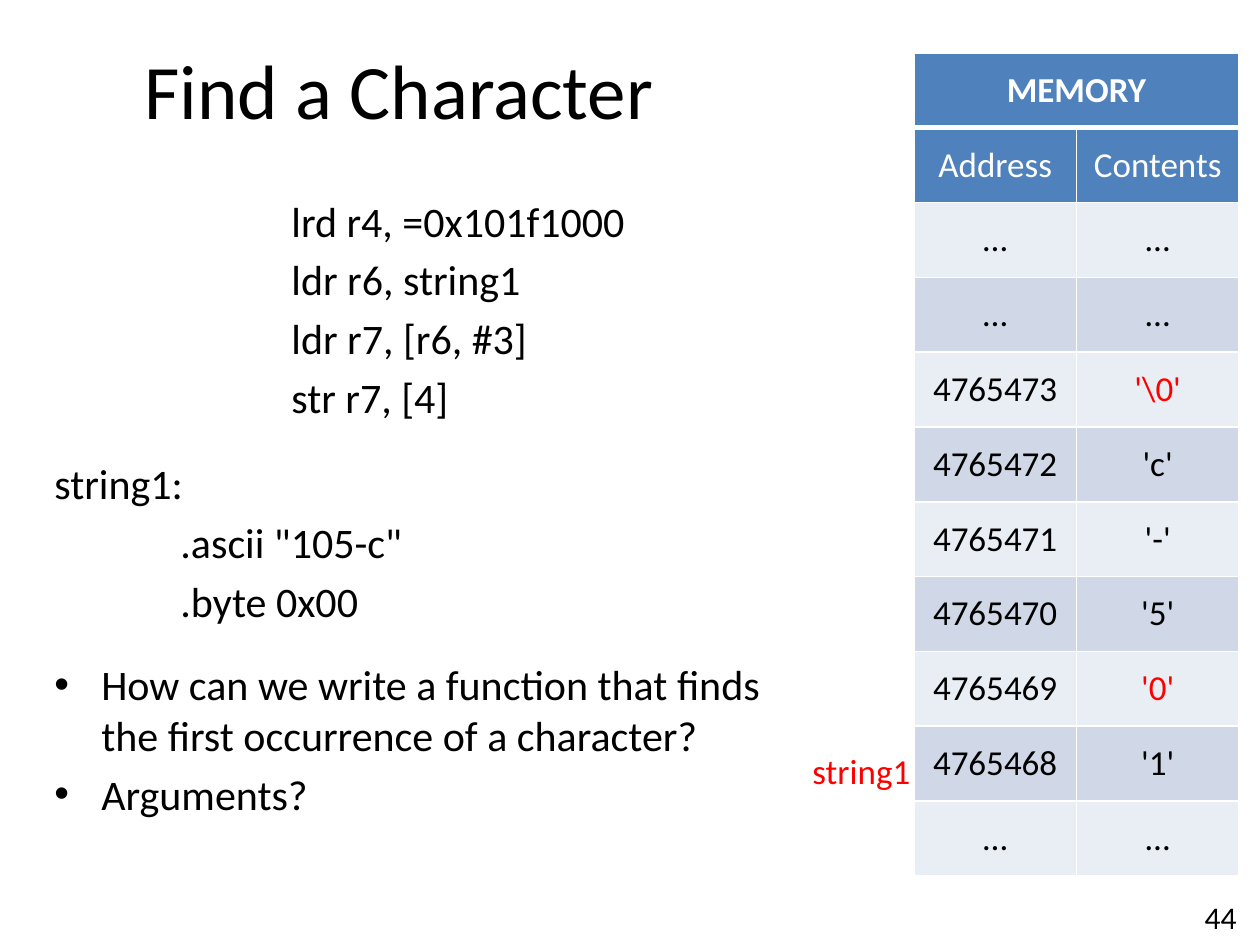
from lxml import etree
from pptx import Presentation
from pptx.dml.color import RGBColor
from pptx.enum.text import MSO_ANCHOR, PP_ALIGN
from pptx.oxml.ns import qn
from pptx.util import Pt

LEFT, MID, RIGHT = PP_ALIGN.LEFT, PP_ALIGN.CENTER, PP_ALIGN.RIGHT
TOP, CENTER = MSO_ANCHOR.TOP, MSO_ANCHOR.MIDDLE
SCALE = 914400 / 126
COLORS = {"black": "000000", "white": "FFFFFF", "red": "FF0000",
          "head": "4F81BD", "light": "E9EDF4", "dark": "D0D8E8"}


def px(n):
    return round(n * SCALE)


def write(para, text, size=24, color="black", bold=False, align=LEFT,
          before=0, indent=0, bullet=False):
    """Fill a paragraph; indent is in px, and a bullet hangs in it."""
    props = para._p.get_or_add_pPr()
    props.set("marL", str(px(indent)))
    props.set("indent", str(-px(indent) if bullet else 0))
    para.alignment = align
    para.space_before = Pt(before)
    if bullet:
        etree.SubElement(props, qn("a:buFont")).set("typeface", "Arial")
        etree.SubElement(props, qn("a:buChar")).set("char", "•")
    run = para.add_run()
    run.text = text
    run.font.name = "Calibri"
    run.font.size = Pt(size)
    run.font.bold = bold
    run.font.color.rgb = RGBColor.from_string(COLORS[color])


prs = Presentation()
prs.slide_width, prs.slide_height = px(1260), px(945)
slide = prs.slides.add_slide(prs.slide_layouts[6])

# Text boxes: place, anchor, wrap, then text and format of each paragraph
code = dict(indent=237, before=4.8)
data = dict(indent=126, before=4.8)
point = dict(indent=47, bullet=True)
boxes = [
    ((63, 10, 672, 158), CENTER, True,
     [("Find a Character", dict(size=44, align=MID))]),
    ((42, 189, 757, 693), TOP, True, [
        ("lrd r4, =0x101f1000", dict(indent=237)),
        ("ldr r6, string1", code),
        ("ldr r7, [r6, #3]", code),
        ("str r7, [4]", code),
        ("string1:", dict(before=20.5)),
        ('.ascii "105-c"', data),
        (".byte 0x00", data),
        ("How can we write a function that finds the first occurrence "
         "of a character?", dict(before=19, **point)),
        ("Arguments?", dict(before=4.8, **point))]),
    ((955, 892, 294, 50), TOP, True, [("44", dict(size=18, align=RIGHT))]),
    ((800, 743, 125, 55), TOP, False,
     [("string1", dict(size=20, color="red"))]),
]
for place, anchor, wrap, lines in boxes:
    frame = slide.shapes.add_textbox(*map(px, place)).text_frame
    frame.word_wrap = wrap
    frame.vertical_anchor = anchor
    for i, (text, form) in enumerate(lines):
        para = frame.add_paragraph() if i else frame.paragraphs[0]
        write(para, text, **form)

# Memory table
rows = [("MEMORY", ""), ("Address", "Contents"), ("…", "…"), ("…", "…"),
        ("4765473", r"'\0'"), ("4765472", "'c'"), ("4765471", "'-'"),
        ("4765470", "'5'"), ("4765469", "'0'"), ("4765468", "'1'"),
        ("…", "…")]
reds = {r"'\0'", "'0'"}
table = slide.shapes.add_table(
    len(rows), 2, *map(px, (914, 53, 325, 823))).table
table.cell(0, 0).merge(table.cell(0, 1))
for r, row in enumerate(rows):
    for c, text in enumerate(row):
        cell = table.cell(r, c)
        props = cell._tc.get_or_add_tcPr()
        for side in "LRTB":
            thick = (r, side) in {(0, "B"), (1, "T")}
            line = etree.SubElement(props, qn(f"a:ln{side}"))
            line.set("w", str(Pt(3 if thick else 1)))
            fill = etree.SubElement(line, qn("a:solidFill"))
            etree.SubElement(fill, qn("a:srgbClr")).set("val", COLORS["white"])
        shade = "head" if r < 2 else ("light", "dark")[r % 2]
        cell.fill.solid()
        cell.fill.fore_color.rgb = RGBColor.from_string(COLORS[shade])
        cell.vertical_anchor = CENTER
        if text:
            color = "white" if r < 2 else "red" if text in reds else "black"
            write(cell.text_frame.paragraphs[0], text, size=20, color=color,
                  bold=r == 0, align=MID)

prs.save("out.pptx")
